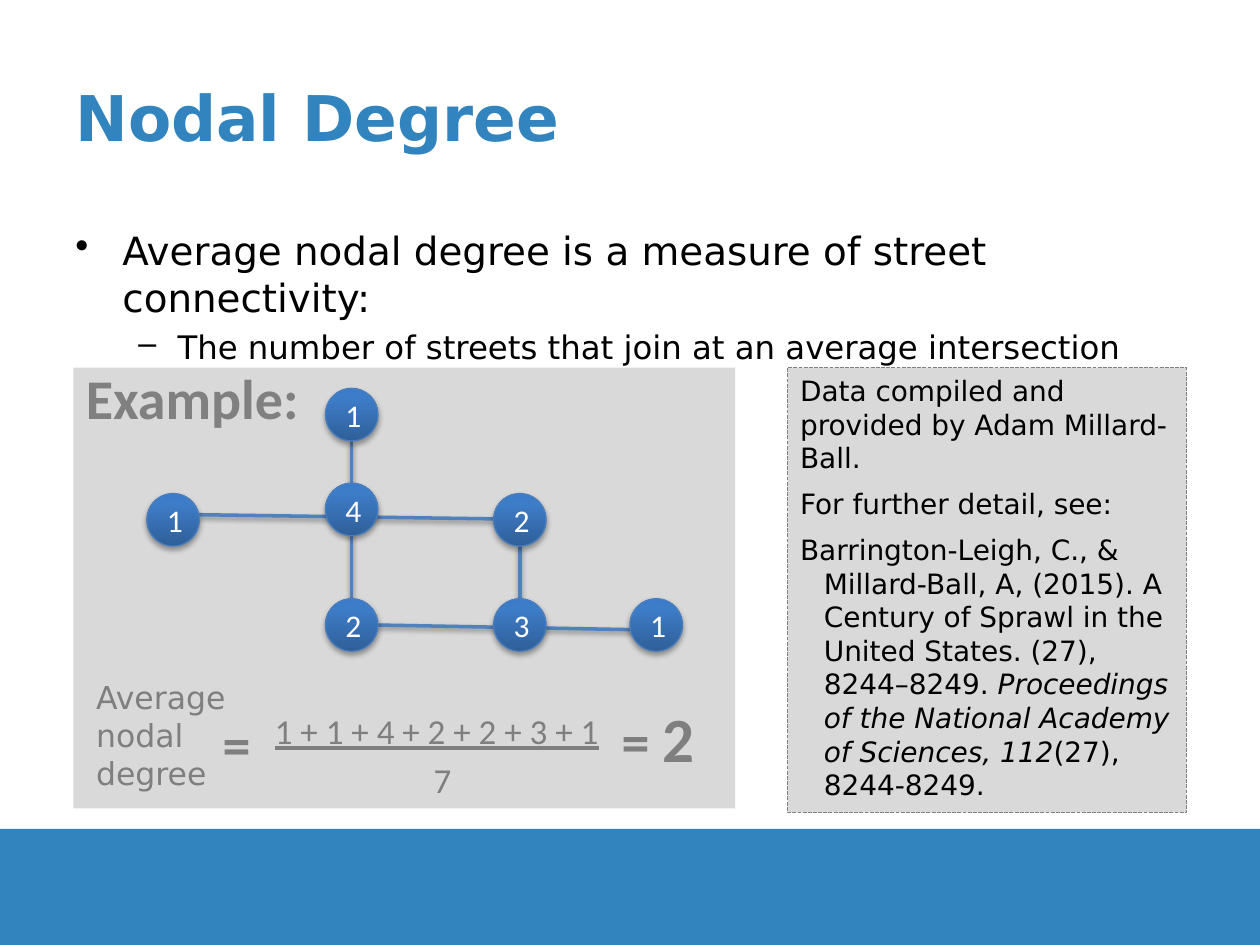
from dataclasses import dataclass

from lxml import etree
from pptx import Presentation
from pptx.dml.color import RGBColor
from pptx.enum.dml import MSO_LINE
from pptx.enum.shapes import MSO_CONNECTOR, MSO_SHAPE
from pptx.enum.text import MSO_ANCHOR, PP_ALIGN
from pptx.oxml import parse_xml
from pptx.oxml.ns import nsdecls, qn
from pptx.util import Cm, Pt


@dataclass(frozen=True)
class Theme:
    sans: str = "DejaVu Sans"
    node_font: str = "Calibri"
    brand: str = "3284BF"
    panel: str = "D9D9D9"
    ink: str = "000000"
    muted: str = "7F7F7F"
    border: str = "808080"
    white: str = "FFFFFF"
    edge: str = "4F81BD"
    node_line: str = "4B7EBC"
    node_stops: tuple = ((0, "2F5F99"), (80, "3D7CC7"), (100, "3A7CCB"))
    title: float = 36
    body: float = 22.2
    sub: float = 18.5
    heading: float = 32
    formula: float = 20
    label: float = 18
    note: float = 16


T = Theme()


def rgb(value):
    return RGBColor.from_string(value)


def add_run(p, text, size, color=T.ink, font=T.sans, bold=False, italic=False, underline=False):
    r = p.add_run()
    r.text = text
    f = r.font
    f.size, f.name, f.bold, f.italic, f.underline = Pt(size), font, bold, italic, underline
    f.color.rgb = rgb(color)


def indent(p, left, first=0, bullet=None):
    pPr = p._p.get_or_add_pPr()
    pPr.set("marL", str(Cm(left)))
    pPr.set("indent", str(Cm(first)))
    if bullet:
        etree.SubElement(pPr, qn("a:buChar")).set("char", bullet)


def add_text(slide, x, y, w, h, anchor=MSO_ANCHOR.TOP):
    tf = slide.shapes.add_textbox(Cm(x), Cm(y), Cm(w), Cm(h)).text_frame
    tf.word_wrap = True
    tf.vertical_anchor = anchor
    return tf


def add_filled(slide, kind, x, y, w, h, fill):
    sp = slide.shapes.add_shape(kind, Cm(x), Cm(y), Cm(w), Cm(h))
    sp.shadow.inherit = False
    sp.fill.solid()
    sp.fill.fore_color.rgb = rgb(fill)
    sp.line.fill.background()
    return sp


def drop_shadow(sp, alpha, dist):
    spPr = sp._element.spPr
    for old in spPr.findall(qn("a:effectLst")):
        spPr.remove(old)
    spPr.append(parse_xml(
        f'<a:effectLst {nsdecls("a")}><a:outerShdw blurRad="{Pt(3.1)}" dist="{Pt(dist)}" '
        f'dir="5400000" rotWithShape="0"><a:srgbClr val="{T.ink}">'
        f'<a:alpha val="{alpha * 1000}"/></a:srgbClr></a:outerShdw></a:effectLst>'))


def gradient(sp):
    spPr = sp._element.spPr
    stops = "".join(f'<a:gs pos="{pos * 1000}"><a:srgbClr val="{color}"/></a:gs>'
                    for pos, color in T.node_stops)
    spPr.replace(spPr.find(qn("a:solidFill")), parse_xml(
        f'<a:gradFill {nsdecls("a")} rotWithShape="1"><a:gsLst>{stops}</a:gsLst>'
        f'<a:lin ang="16200000" scaled="0"/></a:gradFill>'))


def add_street(slide, x1, y1, x2, y2):
    line = slide.shapes.add_connector(MSO_CONNECTOR.STRAIGHT, Cm(x1), Cm(y1), Cm(x2), Cm(y2))
    line.line.color.rgb = rgb(T.edge)
    line.line.width = Pt(2)
    drop_shadow(line, 38, 1.6)


def add_node(slide, x, y, degree):
    sp = add_filled(slide, MSO_SHAPE.OVAL, x, y, 1.06, 1.06, T.edge)
    gradient(sp)
    sp.line.color.rgb = rgb(T.node_line)
    sp.line.width = Pt(0.75)
    drop_shadow(sp, 35, 1.8)
    tf = sp.text_frame
    tf.vertical_anchor = MSO_ANCHOR.MIDDLE
    p = tf.paragraphs[0]
    p.alignment = PP_ALIGN.CENTER
    add_run(p, degree, T.label, T.white, T.node_font)


def add_title(slide, x, y, w, h):
    tf = add_text(slide, x, y, w, h, MSO_ANCHOR.MIDDLE)
    add_run(tf.paragraphs[0], "Nodal Degree", T.title, T.brand, bold=True)


def add_body(slide, x, y, w, h):
    tf = add_text(slide, x, y, w, h)
    p = tf.paragraphs[0]
    indent(p, 0.95, -0.95, "•")
    add_run(p, "Average nodal degree is a measure of street connectivity:", T.body)
    p = tf.add_paragraph()
    p.level = 1
    indent(p, 2.06, -0.79, "–")
    p.space_before = Pt(4)
    add_run(p, "The number of streets that join at an average intersection", T.sub)


def add_network(slide, x, y):
    streets = [(5.61, 1.48, 5.61, 5.49), (2.12, 2.96, 8.47, 3.05),
               (9, 3.6, 9, 4.66), (6.14, 5.19, 11.65, 5.29)]
    nodes = [(5.08, 4.66, "2"), (5.08, 0.42, "1"), (5.08, 2.33, "4"), (8.47, 4.66, "3"),
             (8.47, 2.54, "2"), (1.48, 2.54, "1"), (11.22, 4.66, "1")]
    for x1, y1, x2, y2 in streets:
        add_street(slide, x + x1, y + y1, x + x2, y + y2)
    for dx, dy, degree in nodes:
        add_node(slide, x + dx, y + dy, degree)


def add_formula(slide, x, y):
    calibri = dict(color=T.muted, font=T.node_font)
    tf = add_text(slide, x + 3.81, y + 6.77, 7.82, 2.11)
    add_run(tf.paragraphs[0], "1 + 1 + 4 + 2 + 2 + 3 + 1", T.formula, underline=True, **calibri)
    p = tf.add_paragraph()
    indent(p, 3.2)
    p.space_before = Pt(4)
    add_run(p, "7", T.formula, **calibri)

    p = add_text(slide, x + 10.8, y + 6.56, 2.54, 1.47).paragraphs[0]
    add_run(p, "= ", T.heading, bold=True, **calibri)
    add_run(p, "2", T.title, bold=True, **calibri)

    p = add_text(slide, x + 0.21, y + 6.14, 3.81, 2.11).paragraphs[0]
    add_run(p, "Average nodal degree", T.label, T.muted)
    p = add_text(slide, x + 2.76, y + 6.77, 1.27, 1.47).paragraphs[0]
    add_run(p, "=", T.heading, bold=True, **calibri)


def add_example(slide, x, y):
    add_network(slide, x, y)
    add_formula(slide, x, y)
    p = add_text(slide, x, y - 0.21, 6.78, 1.47).paragraphs[0]
    add_run(p, "Example:", T.heading, T.border, T.node_font, bold=True)


def add_source_note(slide, x, y, w, h):
    sp = add_filled(slide, MSO_SHAPE.RECTANGLE, x, y, w, h, T.panel)
    sp.line.color.rgb = rgb(T.border)
    sp.line.width = Pt(0.75)
    sp.line.dash_style = MSO_LINE.SQUARE_DOT
    tf = sp.text_frame
    tf.word_wrap = True
    tf.vertical_anchor = MSO_ANCHOR.TOP
    paragraphs = [
        [("Data compiled and provided by Adam Millard-Ball.", False)],
        [("For further detail, see:", False)],
        [("Barrington-Leigh, C., & Millard-Ball, A, (2015). A Century of Sprawl in the "
          "United States. (27), 8244–8249.", False),
         (" Proceedings of the National Academy of Sciences, 112", True),
         ("(27), 8244-8249.", False)],
    ]
    for i, runs in enumerate(paragraphs):
        p = tf.add_paragraph() if i else tf.paragraphs[0]
        p.alignment = PP_ALIGN.LEFT
        if i:
            p.space_before = Pt(7)
        for text, italic in runs:
            add_run(p, text, T.note, italic=italic)
    indent(p, 0.48, -0.48)


def main():
    prs = Presentation()
    prs.slide_width, prs.slide_height = Cm(25.4), Cm(19.05)
    slide = prs.slides.add_slide(prs.slide_layouts[6])
    add_filled(slide, MSO_SHAPE.RECTANGLE, 0, 16.71, 25.4, 2.34, T.brand)
    add_title(slide, 1.27, 0.76, 22.86, 3.18)
    add_filled(slide, MSO_SHAPE.RECTANGLE, 1.48, 7.41, 13.34, 8.89, T.panel)
    add_body(slide, 1.27, 4.45, 22.86, 2.74)
    add_example(slide, 1.48, 7.41)
    add_source_note(slide, 15.88, 7.41, 8.04, 8.97)
    prs.save("out.pptx")


if __name__ == "__main__":
    main()
